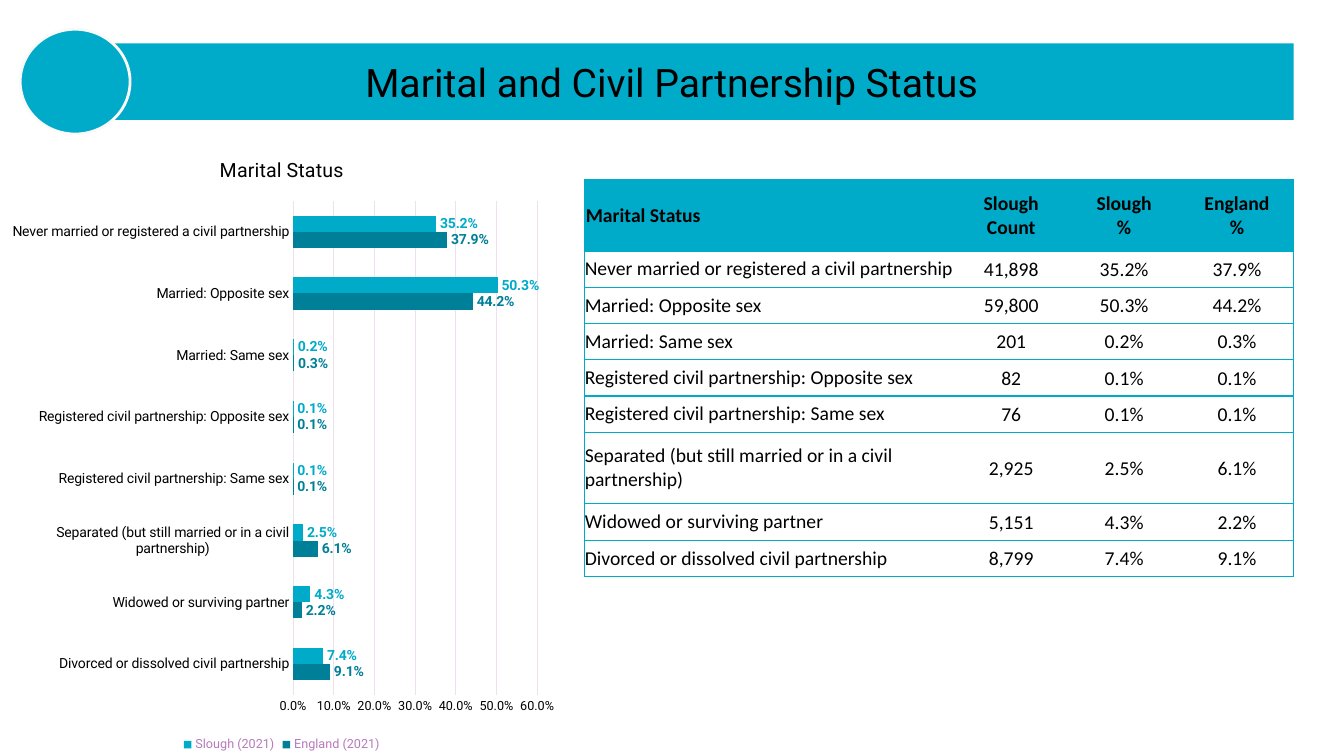
from lxml import etree
from pptx import Presentation
from pptx.chart.data import CategoryChartData
from pptx.dml.color import RGBColor
from pptx.enum.chart import XL_CHART_TYPE, XL_LABEL_POSITION, XL_LEGEND_POSITION, XL_TICK_MARK
from pptx.enum.shapes import MSO_SHAPE
from pptx.enum.text import MSO_ANCHOR, PP_ALIGN
from pptx.oxml import parse_xml
from pptx.oxml.ns import nsdecls, qn
from pptx.util import Inches, Pt

BAR = XL_CHART_TYPE.BAR_CLUSTERED
OUTSIDE_END = XL_LABEL_POSITION.OUTSIDE_END
BOTTOM = XL_LEGEND_POSITION.BOTTOM
NO_TICK = XL_TICK_MARK.NONE
CONNECTOR = MSO_SHAPE.FLOWCHART_CONNECTOR
MIDDLE = MSO_ANCHOR.MIDDLE
LEFT, CENTER = PP_ALIGN.LEFT, PP_ALIGN.CENTER

TEAL, DARK_TEAL, GRID, BLACK = "00ABCA", "008098", "EEE0EF", "000000"

HEADER = ["Marital Status", "Slough\nCount", "Slough\n%", "England\n%"]
# status, Slough count, Slough %, England %
STATUSES = [
    ("Never married or registered a civil partnership", 41898, 35.2, 37.9),
    ("Married: Opposite sex", 59800, 50.3, 44.2),
    ("Married: Same sex", 201, 0.2, 0.3),
    ("Registered civil partnership: Opposite sex", 82, 0.1, 0.1),
    ("Registered civil partnership: Same sex", 76, 0.1, 0.1),
    ("Separated (but still married or in a civil partnership)", 2925, 2.5, 6.1),
    ("Widowed or surviving partner", 5151, 4.3, 2.2),
    ("Divorced or dissolved civil partnership", 8799, 7.4, 9.1),
]


def rgb(value):
    return RGBColor.from_string(value)


def set_font(font, name, size, color, bold=False):
    font.name, font.size, font.bold = name, Pt(size), bold
    font.color.rgb = rgb(color)


prs = Presentation()
prs.slide_width, prs.slide_height = Inches(13.33), Inches(7.5)
s = prs.slides.add_slide(prs.slide_layouts[5])

# Title band
title = s.shapes.title
title.left, title.top = Inches(0.49), Inches(0.43)
title.width, title.height = Inches(12.34), Inches(0.76)
title.fill.solid()
title.fill.fore_color.rgb = rgb(TEAL)
tf = title.text_frame
tf.vertical_anchor = MIDDLE
p = tf.paragraphs[0]
p.alignment = CENTER
r = p.add_run()
r.text = "Marital and Civil Partnership Status"
set_font(r.font, "Roboto", 28, BLACK)

circle = s.shapes.add_shape(CONNECTOR, Inches(0.2), Inches(0.29), Inches(1.09), Inches(1.04))
circle.shadow.inherit = False
circle.fill.solid()
circle.fill.fore_color.rgb = rgb(TEAL)
circle.line.color.rgb = rgb("FAFAFA")
circle.line.width = Pt(2)

# Chart: bars run from the bottom up, so the rows are reversed
rows = STATUSES[::-1]
data = CategoryChartData(number_format="0.0%")
data.categories = [row[0] for row in rows]
data.add_series("England (2021)", [round(row[3] / 100, 3) for row in rows])
data.add_series("Slough (2021)", [round(row[2] / 100, 3) for row in rows])
chart = s.shapes.add_chart(BAR, Inches(0), Inches(1.34), Inches(5.59), Inches(6.16), data).chart
set_font(chart.font, "Roboto", 10, "814485")

chart.has_title = True
r = chart.chart_title.text_frame.paragraphs[0].add_run()
r.text = "Marital Status"
set_font(r.font, "Roboto", 14, BLACK)
chart.chart_title.include_in_layout = False

chart.has_legend = True
chart.legend.position = BOTTOM
chart.legend.include_in_layout = False
set_font(chart.legend.font, "Roboto", 9, "B77ABB")

for axis, size in ((chart.category_axis, 10), (chart.value_axis, 9)):
    axis.major_tick_mark = axis.minor_tick_mark = NO_TICK
    set_font(axis.tick_labels.font, "Roboto", size, BLACK)
chart.category_axis.format.line.color.rgb = rgb(GRID)
chart.category_axis.format.line.width = Pt(0.75)

values = chart.value_axis
values.minimum_scale, values.maximum_scale, values.major_unit = 0, 0.6, 0.1
values.format.line.fill.background()
values.major_gridlines.format.line.color.rgb = rgb(GRID)
values.major_gridlines.format.line.width = Pt(0.75)
values.tick_labels.number_format = "0.0%"
values.tick_labels.number_format_is_linked = False

plot = chart.plots[0]
plot.gap_width, plot.overlap, plot.vary_by_categories = 182, 0, False
for series, color in zip(plot.series, (DARK_TEAL, TEAL)):
    series.format.fill.solid()
    series.format.fill.fore_color.rgb = rgb(color)
    labels = series.data_labels
    labels.show_value = True
    labels.position = OUTSIDE_END
    labels.number_format, labels.number_format_is_linked = "0.0%", False
    set_font(labels.font, "Roboto", 10, color, True)

plot_area = chart.element.find(".//" + qn("c:plotArea"))
for old in plot_area.findall(qn("c:layout")):
    plot_area.remove(old)
layout = parse_xml(f"<c:layout {nsdecls('c')}><c:manualLayout/></c:layout>")
for tag, val in (("layoutTarget", "inner"), ("xMode", "edge"), ("yMode", "edge"),
                 ("x", "0.52"), ("y", "0.106"), ("w", "0.433"), ("h", "0.796")):
    etree.SubElement(layout[0], qn("c:" + tag)).set("val", val)
plot_area.insert(0, layout)

# Table
cells = [HEADER] + [[name, f"{count:,}", f"{slough}%", f"{england}%"]
                    for name, count, slough, england in STATUSES]
table = s.shapes.add_table(len(cells), len(HEADER), Inches(5.8), Inches(1.78),
                           Inches(7.04), Inches(3.94)).table
table.horz_banding = False
for column, width in zip(table.columns, (3.67, 1.12, 1.12, 1.12)):
    column.width = Inches(width)

for i, row in enumerate(cells):
    table.rows[i].height = Inches(0.71 if i in (0, 6) else 0.36)
    for j, text in enumerate(row):
        cell = table.cell(i, j)
        cell.vertical_anchor = MIDDLE
        inset = Inches(0 if i and j == 0 else 0.01)
        cell.margin_left = cell.margin_right = cell.margin_top = inset
        cell.margin_bottom = 0
        tcPr = cell._tc.get_or_add_tcPr()
        edges = (("lnL", j == 0), ("lnR", j == len(row) - 1), ("lnT", True), ("lnB", True))
        for side, drawn in edges:
            ln = etree.SubElement(tcPr, qn("a:" + side), w=str(Pt(1)))
            paint = etree.SubElement(ln, qn("a:solidFill" if drawn else "a:noFill"))
            if drawn:
                etree.SubElement(paint, qn("a:srgbClr"), val=TEAL)
        if i == 0:
            cell.fill.solid()
            cell.fill.fore_color.rgb = rgb(TEAL)
        else:
            cell.fill.background()
        tf = cell.text_frame
        for k, line in enumerate(text.split("\n")):
            p = tf.add_paragraph() if k else tf.paragraphs[0]
            p.alignment = CENTER if j else LEFT
            r = p.add_run()
            r.text = line
            set_font(r.font, "Calibri", 14, BLACK, i == 0)

prs.save("out.pptx")
